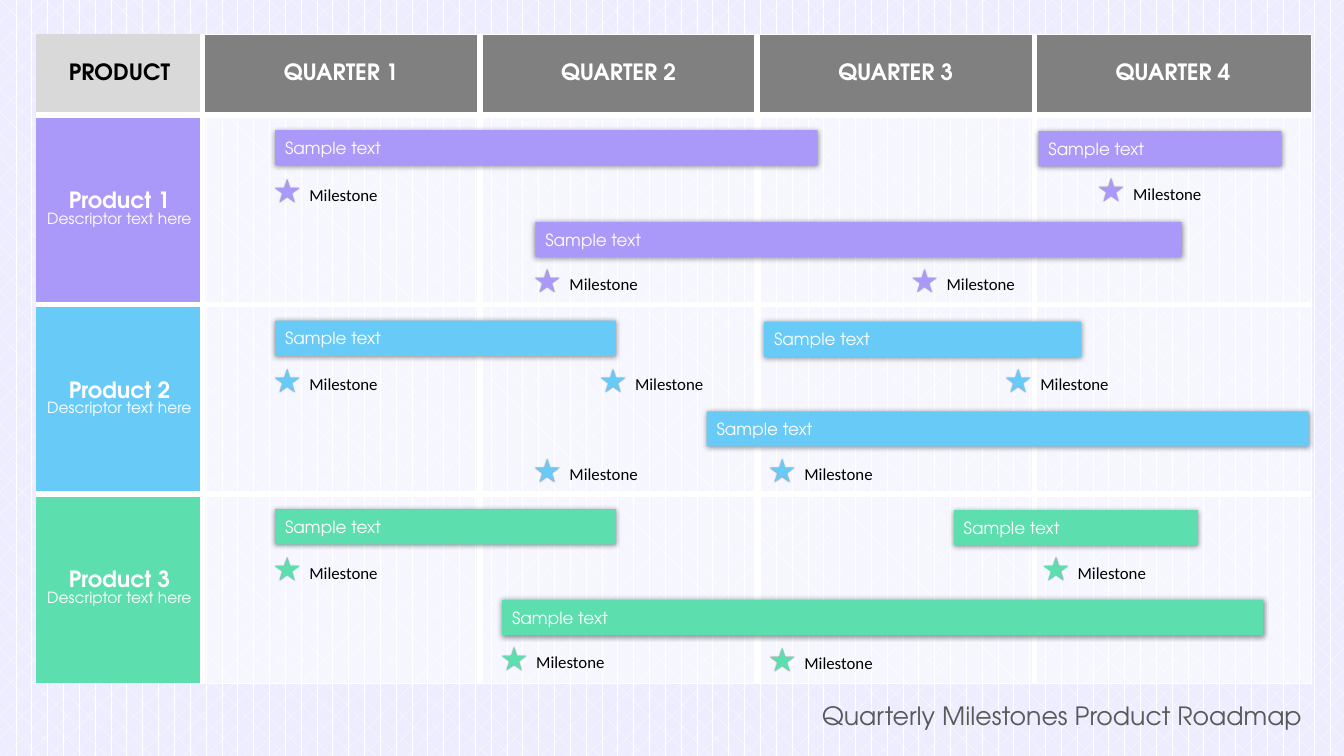
import dataclasses
import typing

import lxml.etree
import pptx
import pptx.dml.color
import pptx.enum.dml
import pptx.enum.shapes
import pptx.enum.text
import pptx.oxml.ns
import pptx.util

Inches = pptx.util.Inches
Align = pptx.enum.text.PP_ALIGN
Anchor = pptx.enum.text.MSO_ANCHOR
ShapeKind = pptx.enum.shapes.MSO_SHAPE
qn = pptx.oxml.ns.qn


@dataclasses.dataclass(frozen=True)
class Theme:
    """Colours, fonts and type sizes of the roadmap."""
    heading_font: str = "TeX Gyre Adventor"
    label_font: str = "Calibri"
    white: str = "FFFFFF"
    black: str = "000000"
    backdrop: str = "EDEDFF"
    title: str = "595959"
    corner: str = "D9D9D9"
    quarter: str = "808080"
    title_size: float = 18
    header_size: float = 16
    label_size: float = 12
    descriptor_size: float = 11
    grid_line: float = 4.5
    edge_line: float = 0.5


class Bar(typing.NamedTuple):
    """A span of work, in inches."""
    left: float
    top: float
    width: float


class Milestone(typing.NamedTuple):
    """The corner of a milestone star, in inches."""
    left: float
    top: float


class Product(typing.NamedTuple):
    """One row of the roadmap."""
    name: str
    color: str
    bars: tuple[Bar, ...]
    milestones: tuple[Milestone, ...]


THEME = Theme()
QUARTERS = ("QUARTER 1", "QUARTER 2", "QUARTER 3", "QUARTER 4")
PRODUCTS = (
    Product("Product 1", "AA99F9",
            (Bar(2.73, 1.29, 5.38), Bar(5.31, 2.2, 6.41), Bar(10.3, 1.3, 2.41)),
            (Milestone(2.73, 1.78), Milestone(5.31, 2.67),
             Milestone(10.9, 1.77), Milestone(9.05, 2.67))),
    Product("Product 2", "68CBF7",
            (Bar(2.73, 3.18, 3.38), Bar(7.01, 4.08, 5.97), Bar(7.58, 3.19, 3.14)),
            (Milestone(2.73, 3.66), Milestone(5.31, 4.55), Milestone(5.96, 3.66),
             Milestone(9.98, 3.66), Milestone(7.64, 4.55))),
    Product("Product 3", "5CDEAE",
            (Bar(2.73, 5.05, 3.38), Bar(4.98, 5.95, 7.55), Bar(9.46, 5.06, 2.42)),
            (Milestone(2.73, 5.53), Milestone(10.35, 5.53),
             Milestone(7.64, 6.43), Milestone(4.98, 6.42))),
)


def rgb(color: str) -> pptx.dml.color.RGBColor:
    """Turn a hex string into a colour."""
    return pptx.dml.color.RGBColor.from_string(color)


def style(paragraph, font: str, size: float, color: str, bold: bool = False,
          align: Align = Align.LEFT) -> None:
    """Format a paragraph and its runs."""
    paragraph.alignment = align
    for run in paragraph.runs:
        run.font.name = font
        run.font.size = pptx.util.Pt(size)
        run.font.bold = bold
        run.font.color.rgb = rgb(color)


def add_alpha(color_element, percent: int) -> None:
    """Set the opacity of a colour element."""
    lxml.etree.SubElement(color_element, qn("a:alpha"), val=str(percent * 1000))


def fill_cell(cell, color: str, opacity: int = 100) -> None:
    """Fill a table cell."""
    cell.fill.solid()
    cell.fill.fore_color.rgb = rgb(color)
    if opacity < 100:
        add_alpha(cell._tc.tcPr.find(".//" + qn("a:srgbClr")), opacity)


def border_cell(cell, widths: dict[str, float]) -> None:
    """Draw the four borders of a cell, where zero means none."""
    for position, (side, width) in enumerate(widths.items()):
        line = lxml.etree.Element(qn(f"a:ln{side}"), w=str(pptx.util.Pt(width)))
        if width:
            fill = lxml.etree.SubElement(line, qn("a:solidFill"))
            lxml.etree.SubElement(fill, qn("a:srgbClr"), val=THEME.white)
        else:
            lxml.etree.SubElement(line, qn("a:noFill"))
        cell._tc.tcPr.insert(position, line)


def write_cell(cell, lines: str, color: str) -> None:
    """Write a bold heading and an optional descriptor into a cell."""
    cell.text_frame.text = lines
    heading, *descriptors = cell.text_frame.paragraphs
    style(heading, THEME.heading_font, THEME.header_size, color, True, Align.CENTER)
    for descriptor in descriptors:
        style(descriptor, THEME.heading_font, THEME.descriptor_size, color, False, Align.CENTER)


def add_grid(slide) -> None:
    """Add the table of products and quarters."""
    last_row, last_column = len(PRODUCTS), len(QUARTERS)
    table = slide.shapes.add_table(last_row + 1, last_column + 1, Inches(0.36), Inches(0.34),
                                   Inches(12.65), Inches(6.44)).table
    table.first_row = table.horz_banding = False
    for index, column in enumerate(table.columns):
        column.width = Inches(2.75 if index else 1.65)
    for index, row in enumerate(table.rows):
        row.height = Inches(1.88 if index else 0.8)

    write_cell(table.cell(0, 0), "PRODUCT", THEME.black)
    fill_cell(table.cell(0, 0), THEME.corner)
    for column, quarter in enumerate(QUARTERS, 1):
        write_cell(table.cell(0, column), quarter, THEME.white)
        fill_cell(table.cell(0, column), THEME.quarter)
    for row, product in enumerate(PRODUCTS, 1):
        write_cell(table.cell(row, 0), f"{product.name}\nDescriptor text here", THEME.white)
        fill_cell(table.cell(row, 0), product.color)
        for column in range(1, last_column + 1):
            fill_cell(table.cell(row, column), THEME.white, 50)

    for row in range(last_row + 1):
        for column in range(last_column + 1):
            cell = table.cell(row, column)
            cell.vertical_anchor = Anchor.MIDDLE
            edge = THEME.edge_line if column else 0
            border_cell(cell, {
                "L": THEME.grid_line if column else 0,
                "R": THEME.grid_line if column < last_column else edge,
                "T": THEME.grid_line if row else edge,
                "B": THEME.grid_line if row < last_row else edge,
            })
    final_quarter = table.cell(0, last_column)
    final_quarter.margin_left = final_quarter.margin_right = 0
    final_quarter.margin_top = final_quarter.margin_bottom = 0


def add_marker(slide, kind: ShapeKind, left: float, top: float, width: float, height: float,
               color: str, blur: float, distance: float):
    """Add a filled shape with a soft shadow below it."""
    marker = slide.shapes.add_shape(kind, Inches(left), Inches(top), Inches(width), Inches(height))
    marker.fill.solid()
    marker.fill.fore_color.rgb = rgb(color)
    marker.line.fill.background()
    marker.shadow.inherit = False
    effects = marker._element.spPr.find(qn("a:effectLst"))
    shadow = lxml.etree.SubElement(
        effects, qn("a:outerShdw"), blurRad=str(pptx.util.Pt(blur)),
        dist=str(pptx.util.Pt(distance)), dir="5400000", algn="t", rotWithShape="0")
    add_alpha(lxml.etree.SubElement(shadow, qn("a:srgbClr"), val=THEME.black), 43)
    return marker


def add_label(slide, text: str, left: float, top: float, width: float, height: float,
              font: str, size: float, color: str, align: Align = Align.LEFT) -> None:
    """Add a line of text."""
    frame = slide.shapes.add_textbox(Inches(left), Inches(top), Inches(width),
                                     Inches(height)).text_frame
    frame.word_wrap = True
    frame.auto_size = pptx.enum.text.MSO_AUTO_SIZE.SHAPE_TO_FIT_TEXT
    frame.text = text
    style(frame.paragraphs[0], font, size, color, align=align)


def add_product(slide, product: Product) -> None:
    """Add the bars and milestones of a product."""
    for bar in product.bars:
        frame = add_marker(slide, ShapeKind.RECTANGLE, *bar, 0.35, product.color, 4, 0.5).text_frame
        frame.vertical_anchor = Anchor.MIDDLE
        frame.text = "Sample text"
        style(frame.paragraphs[0], THEME.heading_font, THEME.label_size, THEME.white)
    for left, top in product.milestones:
        add_marker(slide, ShapeKind.STAR_5_POINT, left, top, 0.24, 0.23, product.color, 1, 0)
        add_label(slide, "Milestone", left + 0.24, top, 1.67, 0.3,
                  THEME.label_font, THEME.label_size, THEME.black)


def main() -> None:
    """Build and save the roadmap."""
    deck = pptx.Presentation()
    deck.slide_width, deck.slide_height = Inches(13.33), Inches(7.5)
    slide = deck.slides.add_slide(deck.slide_layouts[6])
    backdrop = slide.background.fill
    backdrop.patterned()
    backdrop.pattern = pptx.enum.dml.MSO_PATTERN.DIVOT
    backdrop.fore_color.rgb = rgb(THEME.white)
    backdrop.back_color.rgb = rgb(THEME.backdrop)
    add_label(slide, "Quarterly Milestones Product Roadmap", 6.72, 6.9, 6.29, 0.4,
              THEME.heading_font, THEME.title_size, THEME.title, Align.RIGHT)
    add_grid(slide)
    for product in PRODUCTS:
        add_product(slide, product)
    deck.save("out.pptx")


if __name__ == "__main__":
    main()
